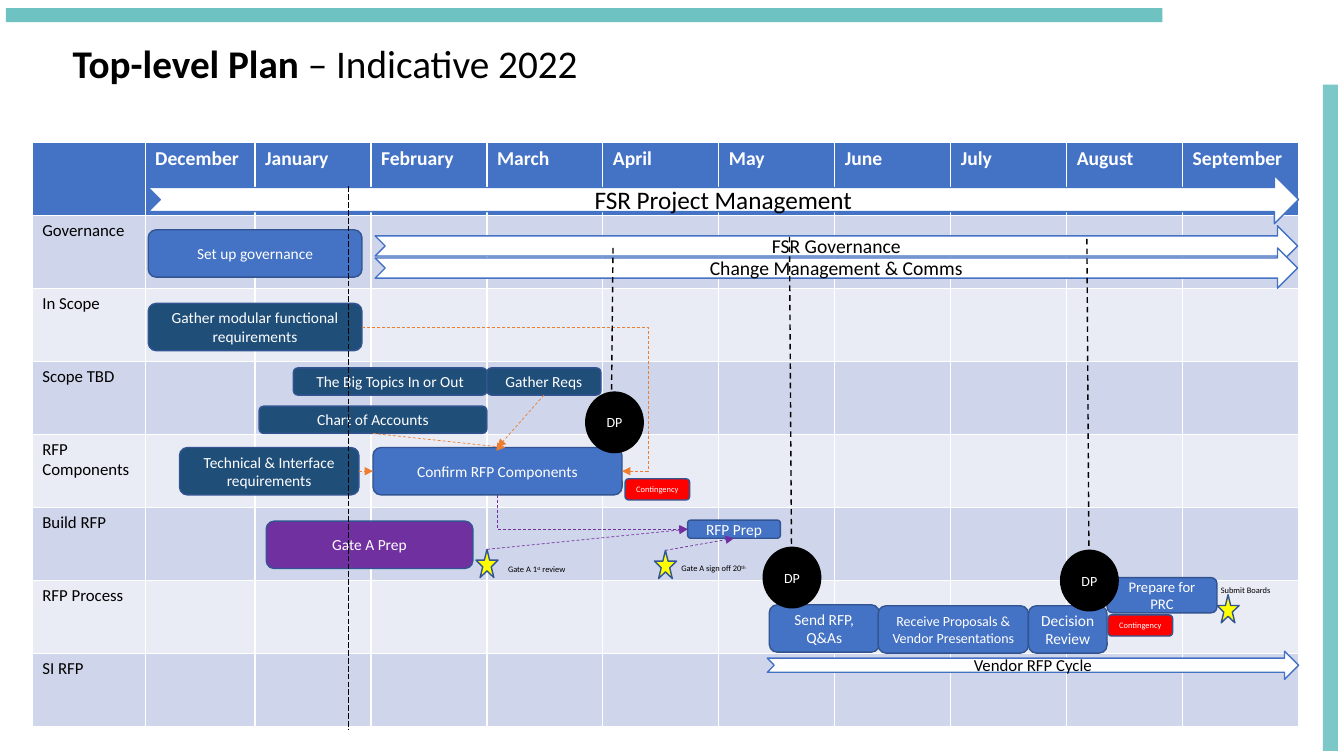
from lxml.etree import SubElement
from pptx import Presentation
from pptx.dml.color import RGBColor
from pptx.enum.dml import MSO_LINE
from pptx.enum.shapes import MSO_CONNECTOR, MSO_SHAPE
from pptx.enum.text import MSO_ANCHOR, PP_ALIGN
from pptx.oxml.ns import qn
from pptx.util import Pt

PX = 9144  # 100 px to the inch
FONT = "Calibri"
COLORS = {
    "blue": "4472C4", "navy": "1F4E79", "edge": "325491", "purple": "7030A0",
    "orange": "ED7D31", "red": "FF0000", "yellow": "FFFF00", "teal": "089797",
    "band_dark": "CFD5EA", "band_light": "E9EBF5", "white": "FFFFFF", "black": "000000",
}
MONTHS = ["December", "January", "February", "March", "April", "May",
          "June", "July", "August", "September"]
WORKSTREAMS = ["Governance", "In Scope", "Scope TBD", "RFP Components",
               "Build RFP", "RFP Process", "SI RFP"]
TOP, LEFT, BOTTOM, RIGHT = range(4)


def rgb(name):
    return RGBColor.from_string(COLORS[name])


def emu(*lengths):
    return [length * PX for length in lengths]


def style_font(font, size, color, bold=False):
    font.name, font.size, font.bold = FONT, Pt(size), bold
    font.color.rgb = rgb(color)


def add_form(slide, kind, box, fill, edge, text="", size=11, color="white"):
    form = slide.shapes.add_shape(kind, *emu(*box))
    form.shadow.inherit = False
    form.fill.solid()
    form.fill.fore_color.rgb = rgb(fill)
    form.line.color.rgb = rgb(edge)
    form.line.width = Pt(1)
    if text:
        frame = form.text_frame
        frame.text = text
        frame.word_wrap = True
        frame.vertical_anchor = MSO_ANCHOR.MIDDLE
        frame.paragraphs[0].alignment = PP_ALIGN.CENTER
        style_font(frame.paragraphs[0].runs[0].font, size, color)
    return form


def add_task(slide, box, text, fill="blue", size=11):
    return add_form(slide, MSO_SHAPE.ROUNDED_RECTANGLE, box, fill, "edge", text, size)


def add_phase(slide, box, text, size):
    add_form(slide, MSO_SHAPE.NOTCHED_RIGHT_ARROW, box, "white", "blue", text, size, "black")


def add_milestone(slide, left, top):
    return add_form(slide, MSO_SHAPE.STAR_5_POINT, (left, top, 22, 28), "yellow", "edge")


def add_decision_point(slide, left, top):
    return add_form(slide, MSO_SHAPE.OVAL, (left, top, 57, 60), "black", "black", "DP", 10)


def add_label(slide, left, top, *parts):
    """Small note; every second part is superscript."""
    note = slide.shapes.add_textbox(*emu(left, top, 102, 20))
    note.text_frame.word_wrap = True
    for index, part in enumerate(parts):
        run = note.text_frame.paragraphs[0].add_run()
        run.text = part
        style_font(run.font, 6, "black")
        if index % 2:
            run._r.get_or_add_rPr().set("baseline", "30000")


def add_rail(slide, box, opacity):
    rail = slide.shapes.add_shape(MSO_SHAPE.RECTANGLE, *emu(*box))
    rail.shadow.inherit = False
    rail.fill.solid()
    rail.fill.fore_color.rgb = rgb("teal")
    rail.line.fill.background()
    color = rail._element.spPr.find(qn("a:solidFill"))[0]
    SubElement(color, qn("a:alpha")).set("val", str(opacity * 1000))


def add_line(slide, start, end, color, width, dash, kind=MSO_CONNECTOR.STRAIGHT):
    line = slide.shapes.add_connector(kind, *emu(*start, *end))
    line.line.color.rgb = rgb(color)
    line.line.width = Pt(width)
    line.line.dash_style = dash
    SubElement(line._element.spPr, qn("a:effectLst"))
    return line


def add_dependency(slide, source, target, color, kind=MSO_CONNECTOR.STRAIGHT):
    """Dashed arrow between two (shape, side) ends; a target may be an (x, y) point."""
    joined = not isinstance(target[0], int)
    arrow = add_line(slide, (0, 0), (0, 0) if joined else target,
                     color, 0.5, MSO_LINE.DASH, kind)
    arrow.begin_connect(*source)
    if joined:
        arrow.end_connect(*target)
    SubElement(arrow.line._get_or_add_ln(), qn("a:tailEnd")).set("type", "triangle")
    return arrow


def bend_past_target(arrow, share):
    guides = arrow._element.spPr.find(qn("a:prstGeom")).get_or_add_avLst()
    guide = SubElement(guides, qn("a:gd"))
    guide.set("name", "adj1")
    guide.set("fmla", f"val {round(share * 100000)}")


def bend_down_then_right(arrow):
    """Turn the elbow into a single corner."""
    left, top, width, height = arrow.left, arrow.top, arrow.width, arrow.height
    arrow.left = left + (width - height) // 2
    arrow.top = top + (height - width) // 2
    arrow.width, arrow.height = height, width
    properties = arrow._element.spPr
    properties.find(qn("a:prstGeom")).set("prst", "bentConnector2")
    frame = properties.find(qn("a:xfrm"))
    frame.set("rot", "16200000")
    frame.set("flipH", "1")


def add_title(slide):
    title = slide.shapes.title
    title.left, title.top, title.width, title.height = emu(62, 34, 558, 57)
    frame = title.text_frame
    frame.vertical_anchor = MSO_ANCHOR.TOP
    heading = frame.paragraphs[0]
    heading.alignment = PP_ALIGN.LEFT
    for text, bold in (("Top-level Plan ", True), ("– Indicative 2022", False)):
        run = heading.add_run()
        run.text = text
        style_font(run.font, 28, "black", bold)


def add_calendar(slide):
    rows, columns = len(WORKSTREAMS) + 1, len(MONTHS) + 1
    calendar = slide.shapes.add_table(rows, columns, *emu(32, 141, 1256, 580)).table
    for index, column in enumerate(calendar.columns):
        column.width = {0: 112, 1: 109}.get(index, 115) * PX
    for r in range(rows):
        fill = "blue" if r == 0 else "band_dark" if r % 2 else "band_light"
        for c in range(columns):
            cell = calendar.cell(r, c)
            cell.fill.solid()
            cell.fill.fore_color.rgb = rgb(fill)
            if r == 0 and c:
                cell.text = MONTHS[c - 1]
                style_font(cell.text_frame.paragraphs[0].runs[0].font, 14, "white", True)
            elif r and c == 0:
                cell.text = WORKSTREAMS[r - 1]
                style_font(cell.text_frame.paragraphs[0].runs[0].font, 12, "black")


def add_plan(slide):
    add_task(slide, (147, 228, 212, 47), "Set up governance")
    add_phase(slide, (147, 174, 1141, 48), "FSR Project Management", 18)
    add_phase(slide, (372, 224, 915, 40), "FSR Governance", 14)
    add_phase(slide, (372, 246, 915, 40), "Change Management & Comms", 14)
    modular = add_task(slide, (147, 301, 212, 47),
                       "Gather modular functional requirements", "navy")
    add_task(slide, (291, 365, 192, 27), "The Big Topics In or Out", "navy")
    accounts = add_task(slide, (257, 403, 226, 27), "Chart of Accounts", "navy")
    gather = add_task(slide, (483, 365, 113, 27), "Gather Reqs", "navy")
    confirm = add_task(slide, (370, 444, 247, 47), "Confirm RFP Components")
    prep = add_task(slide, (682, 516, 92, 18), "RFP Prep")
    add_task(slide, (763, 600, 109, 47), "Send RFP, Q&As")
    add_task(slide, (871, 601, 149, 47), "Receive Proposals & Vendor Presentations", size=10)
    add_task(slide, (1020, 601, 78, 47), "Decision Review")
    add_phase(slide, (761, 646, 527, 28), "Vendor RFP Cycle", 12)
    technical = add_task(slide, (178, 444, 178, 47),
                         "Technical & Interface requirements", "navy")
    add_task(slide, (264, 517, 205, 47), "Gate A Prep", "purple")
    review = add_milestone(slide, 472, 545)
    sign_off = add_milestone(slide, 649, 546)
    add_label(slide, 494, 555, "Gate A 1", "st", " review")
    add_label(slide, 666, 554, "Gate A sign off 20", "th")

    scope = add_dependency(slide, (modular, RIGHT), (confirm, RIGHT), "orange",
                           MSO_CONNECTOR.ELBOW)
    bend_past_target(scope, 1.1)
    add_dependency(slide, (gather, BOTTOM), (confirm, TOP), "orange")
    add_dependency(slide, (accounts, BOTTOM), (501, 444), "orange")
    add_dependency(slide, (technical, RIGHT), (confirm, LEFT), "orange")
    build = add_dependency(slide, (confirm, BOTTOM), (prep, LEFT), "purple",
                           MSO_CONNECTOR.ELBOW)
    bend_down_then_right(build)
    add_dependency(slide, (sign_off, TOP), (prep, BOTTOM), "purple")
    add_dependency(slide, (review, TOP), (prep, LEFT), "purple")
    add_line(slide, (346, 185), (346, 723), "black", 0.5, MSO_LINE.LONG_DASH)

    for left, top in ((620, 475), (1099, 610)):
        add_task(slide, (left, top, 64, 21), "Contingency", "red", 6)
    add_task(slide, (1098, 573, 109, 35), "Prepare for PRC", size=10.5)
    add_milestone(slide, 1207, 590)
    add_label(slide, 1201, 576, "Submit Boards")
    for start, end, corner in (((608, 246), (606, 444), (581, 389)),
                               ((783, 235), (785, 543), (757, 543)),
                               ((1078, 237), (1080, 546), (1052, 546))):
        add_line(slide, start, end, "black", 1, MSO_LINE.DASH)
        add_decision_point(slide, *corner)


def main():
    deck = Presentation()
    deck.slide_width, deck.slide_height = emu(1333, 750)
    slide = deck.slides.add_slide(deck.slide_layouts[5])
    add_title(slide)
    add_calendar(slide)
    add_plan(slide)
    add_rail(slide, (1312, 84, 15, 661), 53)
    add_rail(slide, (6, 8, 1147, 14), 58)
    deck.save("out.pptx")


if __name__ == "__main__":
    main()
